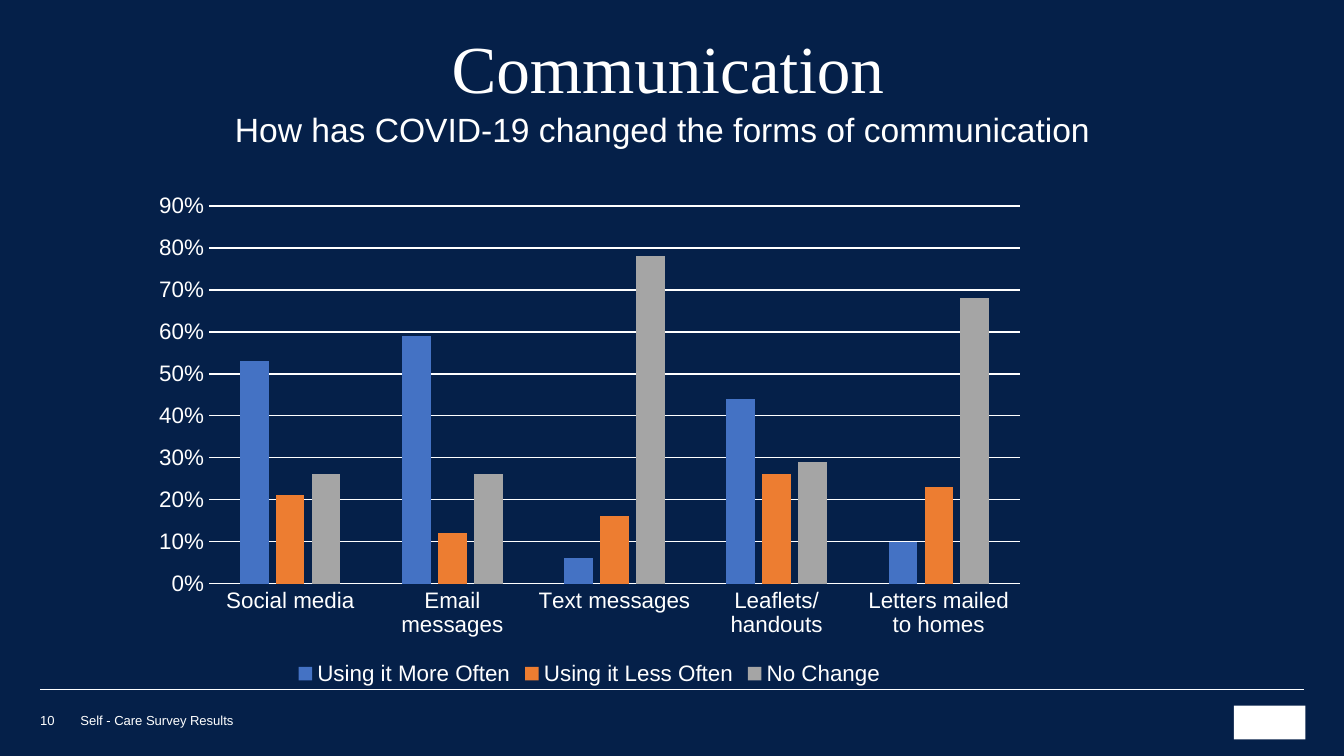
from lxml.etree import SubElement
from pptx import Presentation
from pptx.chart.data import CategoryChartData
from pptx.dml.color import RGBColor
from pptx.enum.chart import XL_CHART_TYPE, XL_LEGEND_POSITION, XL_TICK_MARK
from pptx.enum.shapes import MSO_CONNECTOR, MSO_SHAPE
from pptx.enum.text import MSO_ANCHOR, MSO_AUTO_SIZE, PP_ALIGN
from pptx.oxml.ns import qn
from pptx.util import Cm, Pt

NAVY, WHITE = "052049", "FFFFFF"
CATEGORIES = ["Social media", "Email messages", "Text messages",
              "Leaflets/handouts", "Letters mailed to homes"]
SERIES = [
    ("Using it More Often", "4472C4", [0.53, 0.59, 0.06, 0.44, 0.10]),
    ("Using it Less Often", "ED7D31", [0.21, 0.12, 0.16, 0.26, 0.23]),
    ("No Change", "A5A5A5", [0.26, 0.26, 0.78, 0.29, 0.68]),
]


def rgb(value):
    """Turn a hex string into a colour."""
    return RGBColor.from_string(value)


def set_font(font, size, name="Arial"):
    """Set the typeface and size of white text."""
    font.name, font.size = name, Pt(size)
    font.color.rgb = rgb(WHITE)


def set_line(line, width):
    """Give a line the white colour and a width in points."""
    line.color.rgb = rgb(WHITE)
    line.width = Pt(width)


def fill_text(tf, text, size, anchor, align=PP_ALIGN.LEFT, name="Arial"):
    """Write one formatted paragraph into a text frame."""
    tf.word_wrap, tf.auto_size = True, MSO_AUTO_SIZE.NONE
    tf.vertical_anchor = anchor
    p = tf.paragraphs[0]
    p.text, p.alignment = text, align
    set_font(p.font, size, name)
    return p


def add_title(s, text):
    """Place and format the title placeholder."""
    sp = s.shapes.title
    sp.left, sp.top, sp.width, sp.height = Cm(1.27), Cm(0.89), Cm(22.71), Cm(1.27)
    p = fill_text(sp.text_frame, text, 36, MSO_ANCHOR.BOTTOM, PP_ALIGN.CENTER, "Times New Roman")
    p.line_spacing = 0.85


def add_subtitle(s, text):
    """Add the centred question under the title."""
    sp = s.shapes.add_textbox(Cm(1.27), Cm(1.93), Cm(22.68), Cm(2.13))
    fill_text(sp.text_frame, text, 18, MSO_ANCHOR.TOP, PP_ALIGN.CENTER)


def add_footer_text(s, text, left, top, width, height):
    """Add small footer text without insets."""
    tf = s.shapes.add_textbox(Cm(left), Cm(top), Cm(width), Cm(height)).text_frame
    tf.margin_left = tf.margin_top = tf.margin_right = tf.margin_bottom = 0
    fill_text(tf, text, 7, MSO_ANCHOR.BOTTOM)


def add_rule(s, left, right, y):
    """Add a thin horizontal rule."""
    c = s.shapes.add_connector(MSO_CONNECTOR.STRAIGHT, Cm(left), Cm(y), Cm(right), Cm(y))
    set_line(c.line, 0.25)
    SubElement(c._element.spPr, qn("a:effectLst"))


def add_emblem(s, left, top, width, height):
    """Add a plain block in the footer corner."""
    sp = s.shapes.add_shape(MSO_SHAPE.RECTANGLE, Cm(left), Cm(top), Cm(width), Cm(height))
    sp.shadow.inherit = False
    sp.fill.solid()
    sp.fill.fore_color.rgb = rgb(WHITE)
    sp.line.fill.background()


def add_survey_chart(s):
    """Add the clustered columns of the survey answers."""
    data = CategoryChartData(number_format="0%")
    data.categories = CATEGORIES
    for name, _, values in SERIES:
        data.add_series(name, values)
    chart = s.shapes.add_chart(XL_CHART_TYPE.COLUMN_CLUSTERED, Cm(2.67), Cm(3.48),
                               Cm(16.94), Cm(9.58), data).chart
    chart.has_title = False
    set_font(chart.font, 10)

    plot = chart.plots[0]
    plot.gap_width, plot.overlap, plot.vary_by_categories = 219, -27, False
    for series, (_, color, _) in zip(plot.series, SERIES):
        series.format.fill.solid()
        series.format.fill.fore_color.rgb = rgb(color)

    for axis in (chart.category_axis, chart.value_axis):
        axis.major_tick_mark = axis.minor_tick_mark = XL_TICK_MARK.NONE
        set_font(axis.tick_labels.font, 12)
    set_line(chart.category_axis.format.line, 0.75)
    values = chart.value_axis
    values.minimum_scale, values.maximum_scale, values.major_unit = 0, 0.9, 0.1
    values.format.line.fill.background()
    set_line(values.major_gridlines.format.line, 0.75)
    values.tick_labels.number_format = "0%"
    values.tick_labels.number_format_is_linked = False

    chart.has_legend = True
    chart.legend.position = XL_LEGEND_POSITION.BOTTOM
    chart.legend.include_in_layout = False
    set_font(chart.legend.font, 12)


def main():
    """Build the slide and save it."""
    prs = Presentation()
    prs.slide_width, prs.slide_height = Cm(25.4), Cm(14.29)
    s = prs.slides.add_slide(prs.slide_layouts[5])
    s.background.fill.solid()
    s.background.fill.fore_color.rgb = rgb(NAVY)
    add_rule(s, 0.76, 24.64, 13.03)
    add_emblem(s, 23.32, 13.34, 1.35, 0.64)
    add_footer_text(s, "Self - Care Survey Results", 1.52, 13.49, 11.96, 0.28)
    add_footer_text(s, "10", 0.76, 13.44, 0.69, 0.33)
    add_title(s, "Communication")
    add_subtitle(s, "How has COVID-19 changed the forms of communication ")
    add_survey_chart(s)
    prs.save("out.pptx")


if __name__ == "__main__":
    main()
